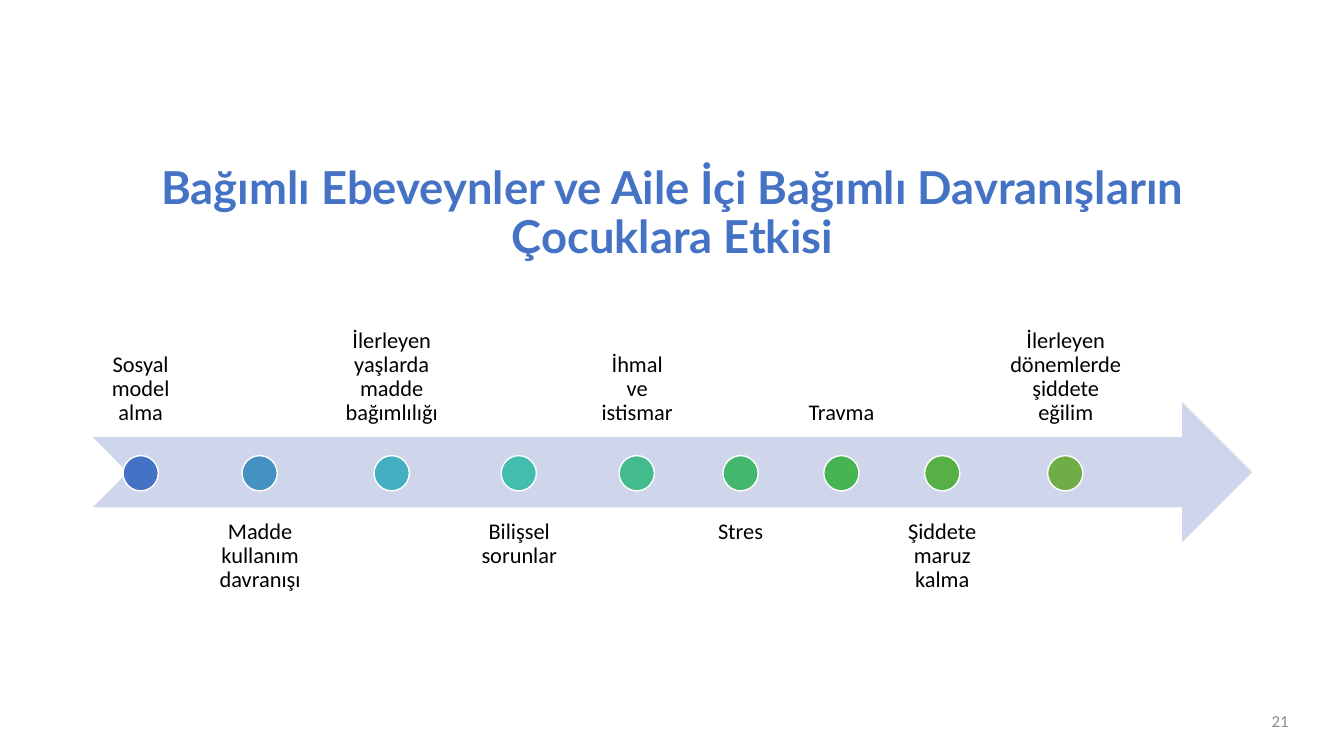
"""Build the slide on the effects of addicted parents on children."""
from pptx import Presentation
from pptx import util as u
from pptx.dml.color import RGBColor
from pptx.enum import shapes, text

PX = 9144
GAP = 5
DOT = 35
COLORS = {"title": "4472C4", "arrow": "CFD5EA", "label": "000000",
          "line": "FFFFFF", "number": "8C8C8C"}
EFFECTS = [
    ("Sosyal model alma", 95, "4472C4"),
    ("Madde kullanım davranışı", 132, "4491C2"),
    ("İlerleyen yaşlarda madde bağımlılığı", 119, "43AFC0"),
    ("Bilişsel sorunlar", 124, "43BDAE"),
    ("İhmal ve istismar", 100, "43BB8D"),
    ("Stres", 95, "44B76E"),
    ("Travma", 95, "45B451"),
    ("Şiddete maruz kalma", 95, "56B046"),
    ("İlerleyen dönemlerde şiddete eğilim", 140, "70AD47"),
]


def box(*lengths):
    """Turn px lengths into EMU."""
    return [u.Emu(n * PX) for n in lengths]


def write(sp, words, font, size, color, align, anchor, inset=(10, 5, 10, 5), spacing=None):
    """Put one formatted paragraph into a shape."""
    tf = sp.text_frame
    tf.word_wrap = True
    tf.auto_size = text.MSO_AUTO_SIZE.NONE
    tf.vertical_anchor = anchor
    tf.margin_left, tf.margin_top, tf.margin_right, tf.margin_bottom = box(*inset)
    tf.text = words
    p = tf.paragraphs[0]
    p.alignment = align
    p.line_spacing = spacing
    r = p.runs[0]
    r.font.name, r.font.size = font, u.Pt(size)
    r.font.color.rgb = RGBColor.from_string(color)
    return r


def add_title(s, words):
    """Place and format the title placeholder."""
    sp = s.shapes.title
    sp.left, sp.top, sp.width, sp.height = box(92, 178, 1150, 118)
    r = write(sp, words, "Lato", 32.4, COLORS["title"], text.PP_ALIGN.CENTER,
              text.MSO_ANCHOR.MIDDLE, (10, 5, 10, 54), 0.9)
    r.font.bold = True


def add_figure(s, kind, place, fill, line=None):
    """Add a filled preset shape with an optional outline."""
    sp = s.shapes.add_shape(kind, *box(*place))
    sp.shadow.inherit = False
    sp.fill.solid()
    sp.fill.fore_color.rgb = RGBColor.from_string(fill)
    if line:
        sp.line.color.rgb = RGBColor.from_string(line)
        sp.line.width = u.Pt(1)
    else:
        sp.line.fill.background()


def add_effect(s, words, x, width, fill, above):
    """Add a label above or below the arrow and its dot."""
    sp = s.shapes.add_textbox(*box(x, 295 if above else 504, width, 139))
    anchor = text.MSO_ANCHOR.BOTTOM if above else text.MSO_ANCHOR.TOP
    write(sp, words, "Calibri", 16, COLORS["label"], text.PP_ALIGN.CENTER,
          anchor, (12, 12, 12, 12), 0.9)
    add_figure(s, shapes.MSO_SHAPE.OVAL, (x + (width - DOT) // 2, 452, DOT, DOT),
               fill, COLORS["line"])


def add_number(s, number):
    """Add the slide number."""
    sp = s.shapes.add_textbox(*box(988, 695, 300, 40))
    write(sp, number, "Calibri", 12, COLORS["number"], text.PP_ALIGN.RIGHT,
          text.MSO_ANCHOR.MIDDLE)


def main():
    """Build and save the slide."""
    prs = Presentation()
    prs.slide_width, prs.slide_height = box(1333, 750)
    s = prs.slides.add_slide(prs.slide_layouts[5])
    add_title(s, "Bağımlı Ebeveynler ve Aile İçi Bağımlı Davranışların Çocuklara Etkisi")
    add_figure(s, shapes.MSO_SHAPE.NOTCHED_RIGHT_ARROW, (92, 399, 1150, 139), COLORS["arrow"])
    x = 92
    for i, (words, width, fill) in enumerate(EFFECTS):
        add_effect(s, words, x, width, fill, above=i % 2 == 0)
        x += width + GAP
    add_number(s, "21")
    prs.save("out.pptx")


if __name__ == "__main__":
    main()
